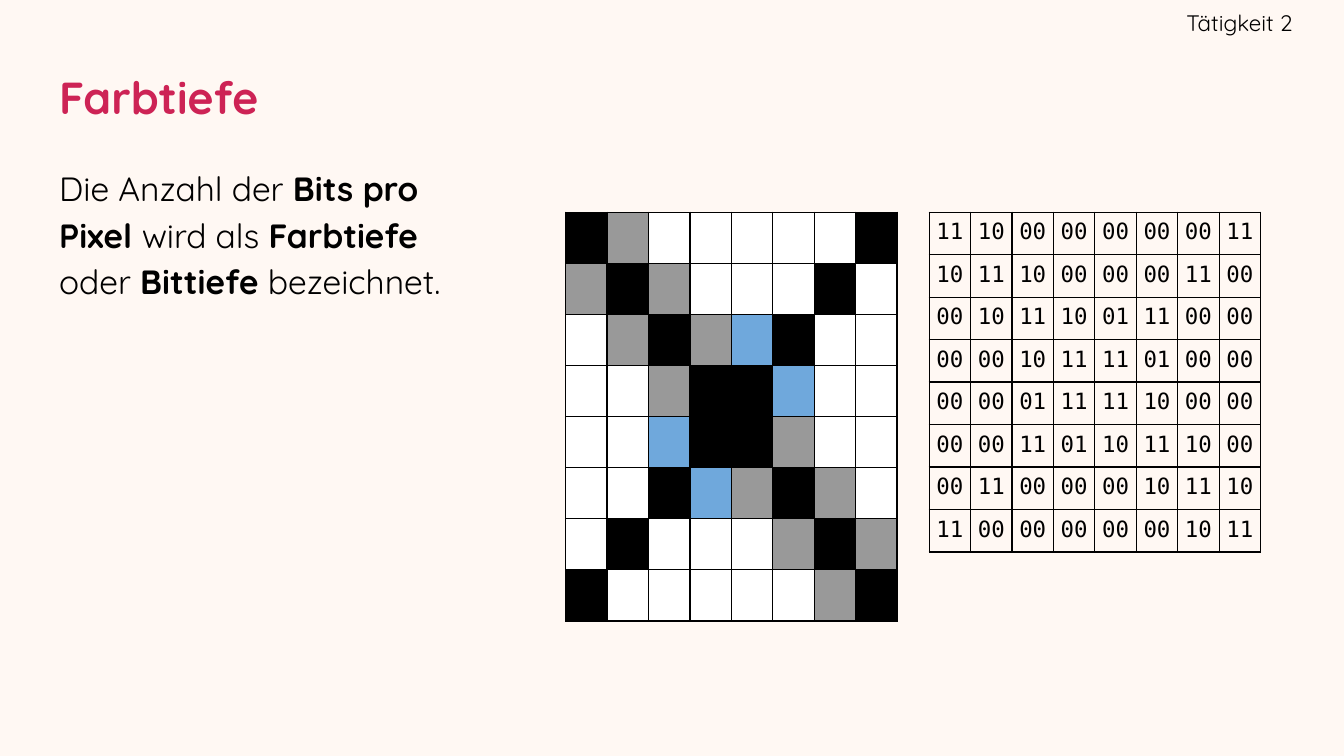
from lxml.etree import SubElement
from pptx import Presentation
from pptx.dml.color import RGBColor
from pptx.enum.text import MSO_ANCHOR, PP_ALIGN
from pptx.oxml.ns import qn
from pptx.util import Cm, Pt

BITS = """
11 10 00 00 00 00 00 11
10 11 10 00 00 00 11 00
00 10 11 10 01 11 00 00
00 00 10 11 11 01 00 00
00 00 01 11 11 10 00 00
00 00 11 01 10 11 10 00
00 11 00 00 00 10 11 10
11 00 00 00 00 00 10 11
"""
PIXEL_COLOURS = {"00": "FFFFFF", "01": "6FA8DC", "10": "999999", "11": "000000"}


def colour(hex_string):
    return RGBColor.from_string(hex_string)


def write(frame, text, size, font, ink="000000", align=PP_ALIGN.LEFT,
          line_spacing=None, space_after=None):
    """Fill the first paragraph; parts between asterisks are bold."""
    paragraph = frame.paragraphs[0]
    paragraph.alignment = align
    if line_spacing:
        paragraph.line_spacing = line_spacing
    if space_after:
        paragraph.space_after = Pt(space_after)
    for index, part in enumerate(text.split("*")):
        if part:
            run = paragraph.add_run()
            run.text = part
            run.font.size = Pt(size)
            run.font.name = font
            run.font.bold = index % 2 == 1
            run.font.color.rgb = colour(ink)


def outline_cell(cell, ink, width):
    properties = cell._tc.get_or_add_tcPr()
    for side in ("a:lnL", "a:lnR", "a:lnT", "a:lnB"):
        line = SubElement(properties, qn(side), w=str(Pt(width)))
        fill = SubElement(line, qn("a:solidFill"))
        SubElement(fill, qn("a:srgbClr"), val=ink)


class SlideBuilder:
    font = "Quicksand"
    code_font = "DejaVu Sans Mono"
    ink = "000000"
    accent = "CD2355"
    background = "FFF8F3"
    inset = 0.25
    cell_inset = 0.13
    border = 0.75

    def __init__(self, slide):
        self.slide = slide
        fill = slide.background.fill
        fill.solid()
        fill.fore_color.rgb = colour(self.background)

    def text(self, text, left, top, width, height, size,
             anchor=MSO_ANCHOR.MIDDLE, right_inset=inset, **style):
        box = self.slide.shapes.add_textbox(Cm(left), Cm(top), Cm(width), Cm(height))
        frame = box.text_frame
        frame.word_wrap = True
        frame.vertical_anchor = anchor
        frame.margin_left = frame.margin_top = frame.margin_bottom = Cm(self.inset)
        frame.margin_right = Cm(right_inset)
        write(frame, text, size, self.font, **style)

    def grid(self, rows, left, top, width, height, format_cell, inset):
        """Draw a bordered table and let format_cell treat each cell."""
        table = self.slide.shapes.add_table(
            len(rows), len(rows[0]), Cm(left), Cm(top), Cm(width), Cm(height)).table
        table.first_row = table.horz_banding = False
        for row, values in enumerate(rows):
            for column, value in enumerate(values):
                cell = table.cell(row, column)
                cell.margin_left = cell.margin_right = Cm(inset)
                cell.margin_top = cell.margin_bottom = Cm(inset)
                outline_cell(cell, self.ink, self.border)
                format_cell(cell, value)

    def bit_table(self, rows, left, top, width, height):
        def show_bits(cell, bits):
            cell.fill.background()
            write(cell.text_frame, bits, 12, self.code_font, align=PP_ALIGN.CENTER)

        self.grid(rows, left, top, width, height, show_bits, self.cell_inset)

    def pixel_table(self, rows, left, top, width, height):
        def paint_pixel(cell, bits):
            cell.fill.solid()
            cell.fill.fore_color.rgb = colour(PIXEL_COLOURS[bits])

        self.grid(rows, left, top, width, height, paint_pixel, inset=0)


def main():
    presentation = Presentation()
    presentation.slide_width = Cm(25.4)
    presentation.slide_height = Cm(14.29)
    builder = SlideBuilder(presentation.slides.add_slide(presentation.slide_layouts[6]))

    bit_rows = [line.split() for line in BITS.strip().splitlines()]

    builder.text("*Farbtiefe*", 0.87, 0.87, 23.67, 1.93, 24, ink=builder.accent)
    builder.bit_table(bit_rows, 17.56, 4.01, 6.27, 6.43)
    builder.pixel_table(bit_rows, 10.69, 4.01, 6.27, 7.73)
    builder.text(
        "Die Anzahl der *Bits pro Pixel *wird als *Farbtiefe *oder *Bittiefe *bezeichnet.",
        0.87, 2.82, 7.75, 10.16, 18, anchor=MSO_ANCHOR.TOP,
        line_spacing=1.15, space_after=16)
    builder.text("Tätigkeit 2", 19, 0, 5.43, 0.87, 12, right_inset=0,
                 align=PP_ALIGN.RIGHT)

    presentation.save("out.pptx")


if __name__ == "__main__":
    main()
